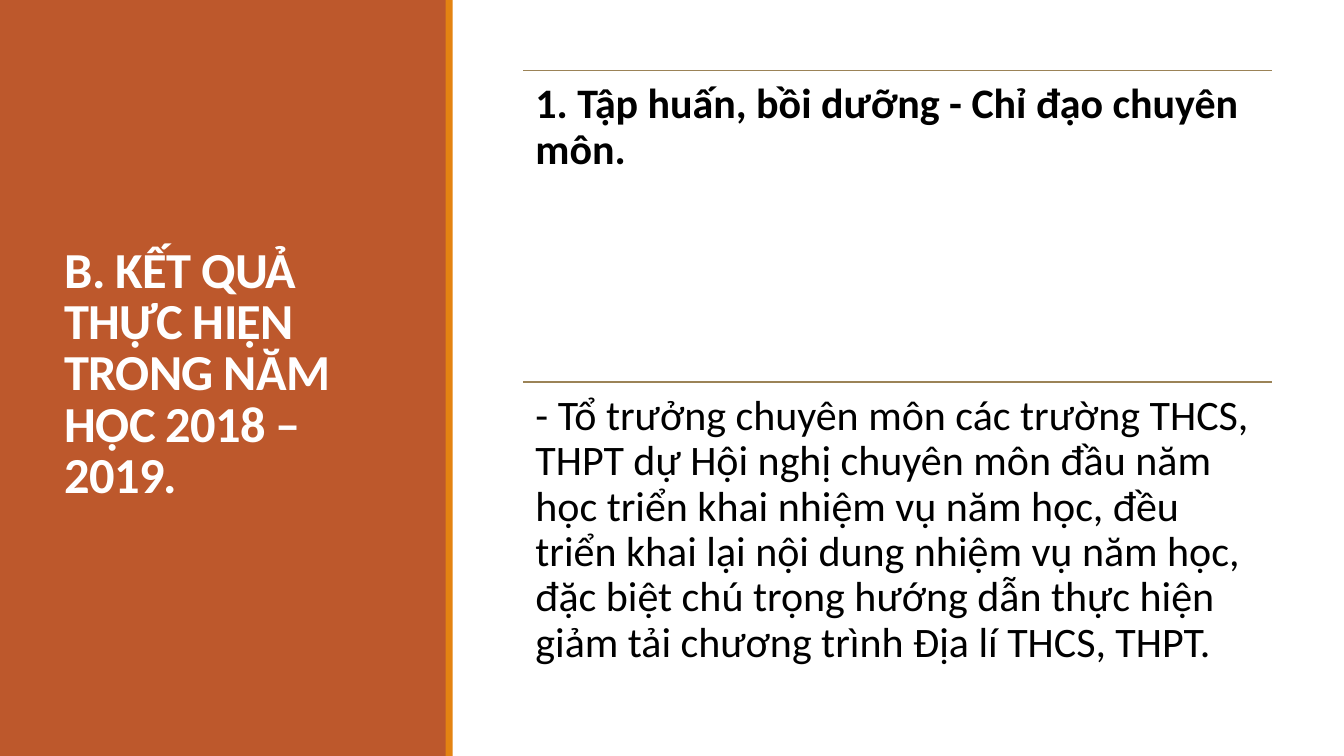
from dataclasses import dataclass

from lxml.etree import SubElement
from pptx import Presentation
from pptx.dml.color import RGBColor
from pptx.enum.shapes import MSO_CONNECTOR as Connector, MSO_SHAPE as Shape
from pptx.enum.text import MSO_ANCHOR as Anchor, MSO_AUTO_SIZE as AutoSize, PP_ALIGN as Align
from pptx.oxml.ns import qn
from pptx.shapes.placeholder import SlidePlaceholder
from pptx.slide import Slide
from pptx.util import Inches, Pt

RUST, ORANGE, TAN, WHITE, BLACK = "BD582C", "E48312", "9B8357", "FFFFFF", "000000"
SECTION_LEFT, SECTION_TOP, SECTION_WIDTH, SECTION_HEIGHT = 5.19, 0.7, 7.43, 3.09


@dataclass(frozen=True)
class Band:
    left: float
    width: float
    colour: str


@dataclass(frozen=True)
class Section:
    text: str
    bold: bool


@dataclass(frozen=True)
class TextStyle:
    size: float
    colour: str
    bold: bool
    line_spacing: float
    inset: float
    anchor: Anchor


BANDS = [Band(0, 4.43, RUST), Band(4.42, 0.07, ORANGE)]
HEADING = "B. KẾT QUẢ THỰC HIỆN TRONG NĂM HỌC 2018 – 2019."
SECTIONS = [
    Section("1. Tập huấn, bồi dưỡng - Chỉ đạo chuyên môn.", True),
    Section(
        "- Tổ trưởng chuyên môn các trường THCS, THPT dự Hội nghị chuyên môn đầu năm học "
        "triển khai nhiệm vụ năm học, đều triển khai lại nội dung nhiệm vụ năm học, "
        "đặc biệt chú trọng hướng dẫn thực hiện giảm tải chương trình Địa lí THCS, THPT.",
        False,
    ),
]


def rgb(colour: str) -> RGBColor:
    return RGBColor.from_string(colour)


def draw_band(slide: Slide, band: Band) -> None:
    strip = slide.shapes.add_shape(
        Shape.RECTANGLE, Inches(band.left), Inches(0), Inches(band.width), Inches(7.5)
    )
    strip.shadow.inherit = False
    strip.fill.solid()
    strip.fill.fore_color.rgb = rgb(band.colour)
    strip.line.fill.background()


def draw_rule(slide: Slide, top: float) -> None:
    rule = slide.shapes.add_connector(
        Connector.STRAIGHT,
        Inches(SECTION_LEFT), Inches(top),
        Inches(SECTION_LEFT + SECTION_WIDTH), Inches(top),
    )
    rule.line.color.rgb = rgb(TAN)
    rule.line.width = Pt(1.25)
    SubElement(rule._element.spPr, qn("a:effectLst"))


def fill_placeholder(
    holder: SlidePlaceholder, text: str, box: tuple[float, float, float, float], style: TextStyle
) -> None:
    holder.left, holder.top, holder.width, holder.height = map(Inches, box)
    frame = holder.text_frame
    frame.text = text
    frame.word_wrap = True
    frame.auto_size = AutoSize.NONE
    frame.vertical_anchor = style.anchor
    frame.margin_left = frame.margin_right = Inches(style.inset)
    frame.margin_top = frame.margin_bottom = Inches(style.inset)
    paragraph = frame.paragraphs[0]
    paragraph.alignment = Align.LEFT
    paragraph.line_spacing = style.line_spacing
    paragraph.space_before = Pt(0)
    font = paragraph.runs[0].font
    font.name, font.size, font.bold = "Calibri", Pt(style.size), style.bold
    font.color.rgb = rgb(style.colour)


def draw_heading(slide: Slide) -> None:
    heading = slide.shapes.title
    style = TextStyle(36, WHITE, True, 0.85, 0.1, Anchor.MIDDLE)
    fill_placeholder(heading, HEADING, (0.54, 0.57, 3.37, 6.31), style)
    heading.text_frame.paragraphs[0].runs[0]._r.get_or_add_rPr().set("spc", "-50")
    slide.shapes._spTree.append(heading._element)


def draw_section(slide: Slide, index: int, section: Section) -> None:
    top = SECTION_TOP + index * SECTION_HEIGHT
    draw_rule(slide, top)
    body = slide.placeholders[index + 1]
    style = TextStyle(30, BLACK, section.bold, 0.9, 0.12, Anchor.TOP)
    fill_placeholder(body, section.text, (SECTION_LEFT, top, SECTION_WIDTH, SECTION_HEIGHT), style)
    properties = body.text_frame.paragraphs[0]._p.get_or_add_pPr()
    properties.set("marL", "0")
    properties.set("indent", "0")
    SubElement(properties, qn("a:buNone"))


def main() -> None:
    """Build the slide on the school-year results and save it."""
    deck = Presentation()
    deck.slide_width, deck.slide_height = Inches(13.33), Inches(7.5)
    slide = deck.slides.add_slide(deck.slide_layouts.get_by_name("Two Content"))
    slide.background.fill.solid()
    slide.background.fill.fore_color.rgb = rgb(WHITE)
    for band in BANDS:
        draw_band(slide, band)
    draw_heading(slide)
    for index, section in enumerate(SECTIONS):
        draw_section(slide, index, section)
    deck.save("out.pptx")


if __name__ == "__main__":
    main()
